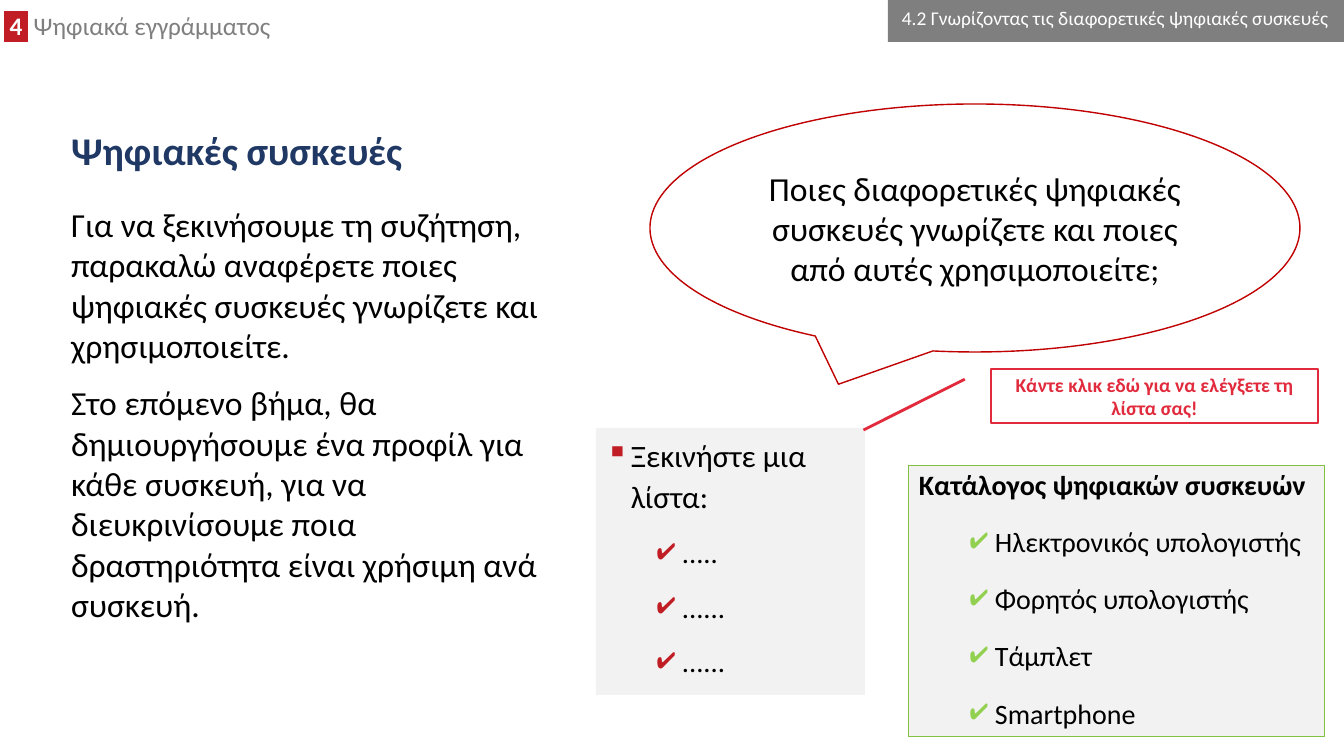
from lxml import etree
from pptx import Presentation
from pptx import util as u
from pptx.dml.color import RGBColor
from pptx.enum import shapes as s, text as t
from pptx.oxml.ns import qn

PX = 914400 / 100.8
BLACK = RGBColor(0x00, 0x00, 0x00)
WHITE = RGBColor(0xFF, 0xFF, 0xFF)
NAVY = RGBColor(0x20, 0x38, 0x64)
GRAY = RGBColor(0x7F, 0x7F, 0x7F)
PALE = RGBColor(0xF2, 0xF2, 0xF2)
CRIMSON = RGBColor(0xC0, 0x1E, 0x24)
DARK_RED = RGBColor(0xC0, 0x00, 0x00)
HINT_RED = RGBColor(0xE1, 0x2A, 0x3C)
GREEN = RGBColor(0x80, 0xC1, 0x41)
TICK_GREEN = RGBColor(0x92, 0xD0, 0x50)
LEFT, CENTER, RIGHT = t.PP_ALIGN.LEFT, t.PP_ALIGN.CENTER, t.PP_ALIGN.RIGHT
TOP, MIDDLE = t.MSO_ANCHOR.TOP, t.MSO_ANCHOR.MIDDLE


def px(n):
    return u.Emu(round(n * PX))


def write(paragraph, words, size, color=BLACK, bold=False, bullet=None,
          indent=0, **layout):
    """Fill one paragraph; bullet is a (character, colour) pair."""
    props = paragraph._p.get_or_add_pPr()
    props.set("marL", str(px(indent)))
    props.set("indent", str(px(-25 if bullet else 0)))
    for name, value in layout.items():
        setattr(paragraph, name, value)
    if bullet:
        mark, mark_color = bullet
        tint = etree.SubElement(props, qn("a:buClr"))
        etree.SubElement(tint, qn("a:srgbClr"), val=str(mark_color))
        etree.SubElement(props, qn("a:buChar"), char=mark)
    else:
        etree.SubElement(props, qn("a:buNone"))
    run = paragraph.add_run()
    run.text = words
    font = {"size": u.Pt(size), "name": "Calibri", "bold": bold}
    for name, value in font.items():
        setattr(run.font, name, value)
    run.font.color.rgb = color
    return run


prs = Presentation()
prs.slide_width, prs.slide_height = px(1344), px(756)
slide = prs.slides.add_slide(prs.slide_layouts[1])

# Chapter heading with its highlighted number
chapter = slide.shapes.add_textbox(px(-6), px(11), px(960), px(35)).text_frame
chapter.word_wrap = True
heading = chapter.paragraphs[0]
number = write(heading, " 4 ", 18, WHITE, True, line_spacing=0.8)
highlight = etree.Element(qn("a:highlight"))
etree.SubElement(highlight, qn("a:srgbClr"), val=str(CRIMSON))
number.font._element.find(qn("a:solidFill")).addnext(highlight)
chapter_name = heading.add_run()
chapter_name.text = " Ψηφιακά εγγράμματος"
chapter_name.font.size, chapter_name.font.name = u.Pt(18), "Calibri"
chapter_name.font.color.rgb = GRAY

# Title and introduction
title, intro = slide.placeholders
for holder, box, anchor in ((title, (61, 119, 1220, 67), MIDDLE),
                            (intro, (61, 199, 504, 536), TOP)):
    holder.left, holder.top, holder.width, holder.height = map(px, box)
    holder.text_frame.vertical_anchor = anchor
    holder.text_frame.auto_size = t.MSO_AUTO_SIZE.NONE
write(title.text_frame.paragraphs[0], "Ψηφιακές συσκευές", 28, NAVY, True,
      alignment=LEFT, line_spacing=0.9)
intro_texts = (
    "Για να ξεκινήσουμε τη συζήτηση, παρακαλώ αναφέρετε ποιες ψηφιακές "
    "συσκευές γνωρίζετε και χρησιμοποιείτε.",
    "Στο επόμενο βήμα, θα δημιουργήσουμε ένα προφίλ για κάθε συσκευή, για να "
    "διευκρινίσουμε ποια δραστηριότητα είναι χρήσιμη ανά συσκευή.",
)
for i, words in enumerate(intro_texts):
    paragraph = intro.text_frame.paragraphs[0] if i == 0 else intro.text_frame.add_paragraph()
    write(paragraph, words, 24, space_before=u.Pt(6 if i else 0),
          space_after=u.Pt(6), line_spacing=1.0)

# Boxes: kind, place, adjustments, fill, line, anchor, paragraphs
SHAPE = s.MSO_SHAPE
red_tick = {"size": 20.4, "bullet": ("✔", CRIMSON), "indent": 76, "level": 1,
            "line_spacing": 1.1, "space_before": u.Pt(12), "alignment": LEFT}
green_tick = {**red_tick, "size": 20, "bullet": ("✔", TICK_GREEN), "line_spacing": 1.2}
list_start = {"size": 22.2, "bullet": ("▪", CRIMSON), "indent": 25,
              "line_spacing": 1.1, "alignment": LEFT}
catalogue_head = {"size": 20, "bold": True, "line_spacing": 0.9, "alignment": LEFT}
question = {"size": 24, "alignment": CENTER}
hint = {"size": 14, "color": HINT_RED, "bold": True, "alignment": CENTER}
section = {"size": 13.9, "color": WHITE, "line_spacing": 0.7, "alignment": RIGHT}
devices = ("Ηλεκτρονικός υπολογιστής", "Φορητός υπολογιστής", "Τάμπλετ", "Smartphone")

boxes = (
    (SHAPE.RECTANGLE, (596, 428, 269, 267), (), PALE, None, TOP,
     [("Ξεκινήστε μια λίστα:", list_start)]
     + [(dots, red_tick) for dots in (".....", "......", "......")]),
    (SHAPE.OVAL_CALLOUT, (650, 104, 650, 248), (-0.21, 0.63), WHITE, (DARK_RED, 1), MIDDLE,
     [("Ποιες διαφορετικές ψηφιακές συσκευές γνωρίζετε και ποιες από αυτές "
       "χρησιμοποιείτε;", question)]),
    (SHAPE.RECTANGLE, (909, 466, 416, 271), (), PALE, (GREEN, 0.75), TOP,
     [("Κατάλογος ψηφιακών συσκευών", catalogue_head)]
     + [(device, green_tick) for device in devices]),
    (SHAPE.LINE_CALLOUT_1, (991, 369, 327, 54), (0.19, -0.08, 1.13, -0.39),
     WHITE, (HINT_RED, 2), MIDDLE,
     [("Κάντε κλικ εδώ για να ελέγξετε τη λίστα σας!", hint)]),
    (SHAPE.RECTANGLE, (888, 0, 456, 42), (), GRAY, None, MIDDLE,
     [("4.2 Γνωρίζοντας τις διαφορετικές ψηφιακές συσκευές", section)]),
)
for kind, place, adjustments, fill, line, anchor, paragraphs in boxes:
    box = slide.shapes.add_shape(kind, *map(px, place))
    box.shadow.inherit = False
    for i, value in enumerate(adjustments):
        box.adjustments[i] = value
    box.fill.solid()
    box.fill.fore_color.rgb = fill
    if line:
        box.line.color.rgb, box.line.width = line[0], u.Pt(line[1])
    else:
        box.line.fill.background()
    frame = box.text_frame
    frame.word_wrap, frame.vertical_anchor = True, anchor
    for i, (words, style) in enumerate(paragraphs):
        write(frame.paragraphs[0] if i == 0 else frame.add_paragraph(), words, **style)

# The section label, drawn last, ends a little short of the slide edge
frame.margin_right = px(15)

prs.save("out.pptx")
